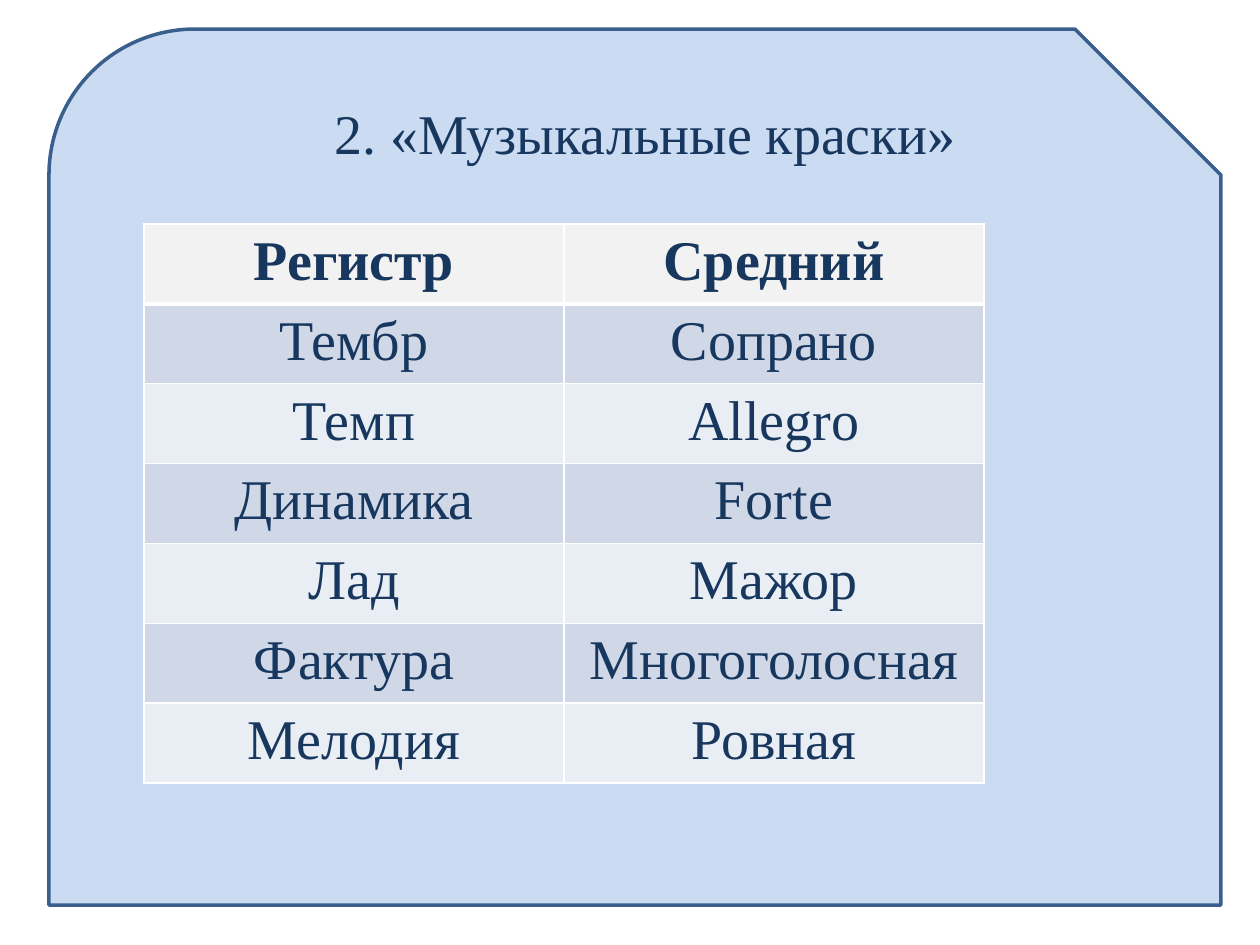
from lxml.etree import SubElement
from pptx import Presentation
from pptx.dml.color import RGBColor
from pptx.enum.shapes import MSO_SHAPE as Shape
from pptx.enum.text import PP_ALIGN as Align
from pptx.oxml import parse_xml
from pptx.oxml.ns import nsdecls, qn
from pptx.util import Emu, Pt

NAVY = "17375E"


def px(*lengths):
    return [Emu(round(length * 914400 / 126)) for length in lengths]


def paint(target, color, bold=None):
    rgb = RGBColor.from_string(color)
    if bold is None:
        target.solid()
        target.fore_color.rgb = rgb
    else:
        target.name = "Times New Roman"
        target.size = Pt(32)
        target.bold = bold
        target.color.rgb = rgb


prs = Presentation()
prs.slide_width, prs.slide_height = px(1260, 945)
slide = prs.slides.add_slide(prs.slide_layouts[6])

panel = slide.shapes.add_shape(Shape.SNIP_ROUND_RECTANGLE, *px(49, 29, 1172, 876))
panel.shadow.inherit = False
paint(panel.fill, "C6D9F1")
panel_color = panel.fill._xPr.find(qn("a:solidFill"))[0]
SubElement(panel_color, qn("a:alpha")).set("val", "90000")
paint(panel.line.fill, "3A5F8C")
panel.line.width = Pt(2)

heading = slide.shapes.add_textbox(*px(134, 86, 1023, 120)).text_frame
heading.word_wrap = True
heading.margin_top = px(12)[0]
heading.text = "2. «Музыкальные краски»"
heading.paragraphs[0].alignment = Align.CENTER
paint(heading.paragraphs[0].runs[0].font, NAVY, False)

traits = [
    ("Регистр", "Средний"),
    ("Тембр", "Сопрано"),
    ("Темп", "Allegro"),
    ("Динамика", "Forte"),
    ("Лад", "Мажор"),
    ("Фактура", "Многоголосная"),
    ("Мелодия", "Ровная"),
]
table = slide.shapes.add_table(len(traits), 2, *px(144, 224, 840, 75 * len(traits))).table
for row, trait in enumerate(traits):
    fill = "F2F2F2" if row == 0 else ("E9EDF4", "D0D8E8")[row % 2]
    for column, word in enumerate(trait):
        cell = table.cell(row, column)
        cell.text = word
        paragraph = cell.text_frame.paragraphs[0]
        paragraph.alignment = Align.CENTER
        paint(paragraph.runs[0].font, NAVY, row == 0)
        borders = cell._tc.get_or_add_tcPr()
        for side in "LRTB":
            thick = (row, side) in [(0, "B"), (1, "T")]
            borders.append(parse_xml(
                f'<a:ln{side} {nsdecls("a")} w="{Pt(3 if thick else 1)}">'
                f'<a:solidFill><a:srgbClr val="FFFFFF"/></a:solidFill></a:ln{side}>'
            ))
        paint(cell.fill, fill)

prs.save("out.pptx")
